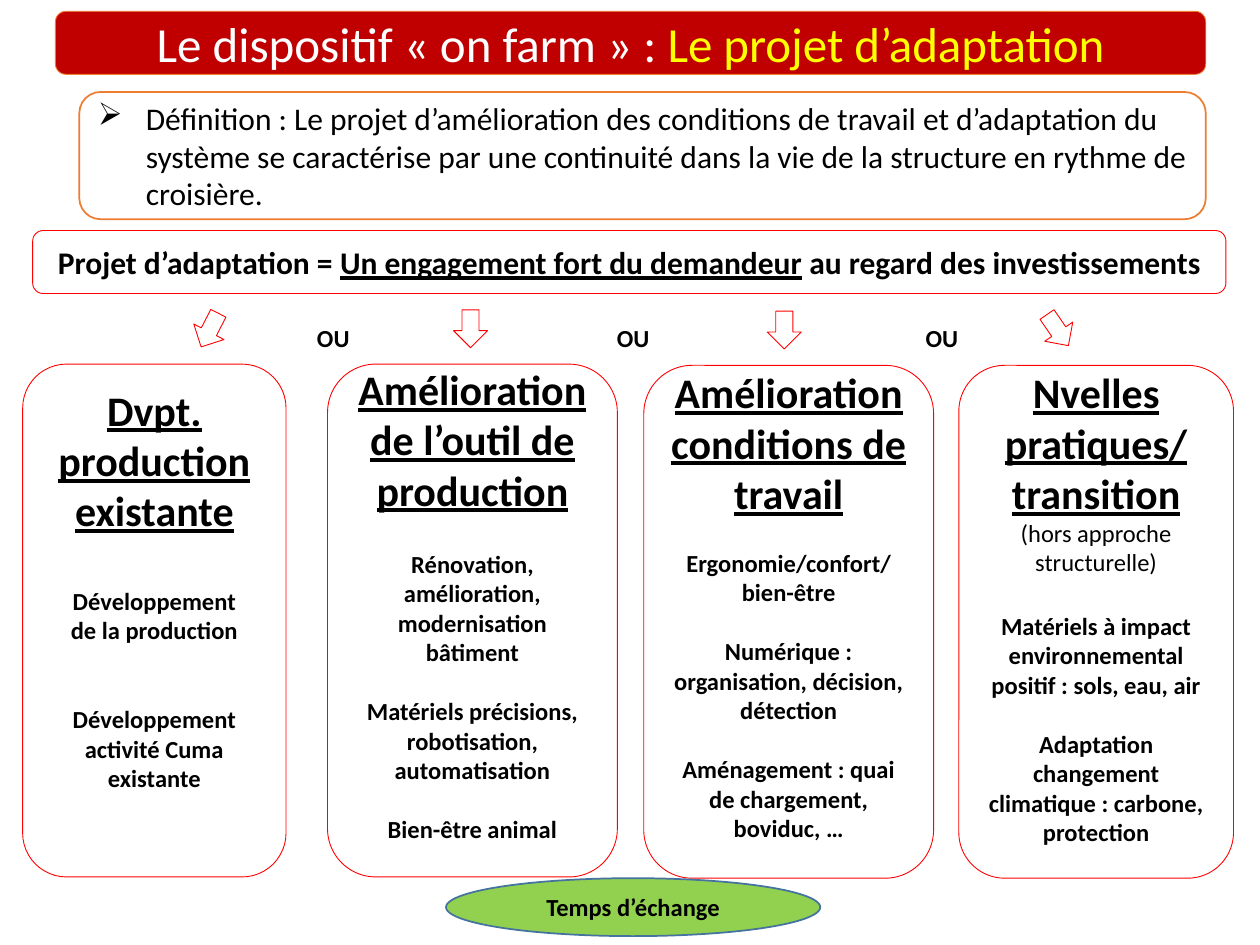
from pptx import Presentation
from pptx.dml.color import RGBColor
from pptx.enum.shapes import MSO_SHAPE
from pptx.enum.text import MSO_ANCHOR, PP_ALIGN
from pptx.oxml.ns import qn
from pptx.util import Inches, Pt
from lxml.etree import SubElement

THEME = {
    "font": "Calibri",
    "white": "FFFFFF", "black": "000000", "red": "FF0000", "dark": "C00000",
    "gold": "FFFF00", "orange": "ED7D31", "green": "92D050", "blue": "43739E",
    "title": 28, "head": 24, "body": 18, "small": 14,
}

TITLE = [("Le dispositif « on farm » : ", "white", ""),
         ("Le projet d’adaptation", "gold", "")]
INTRO = [("Définition : Le projet d’amélioration des conditions de travail et "
          "d’adaptation du système se caractérise par une continuité dans la vie "
          "de la structure en rythme de croisière.", "black", "")]
CLAIM = [("Projet d’adaptation = ", "black", "b"),
         ("Un engagement fort du demandeur", "black", "bu"),
         (" au regard des investissements", "black", "b")]
TALK = [("Temps d’échange", "black", "b")]
OR = [("OU", "black", "b")]

CARDS = [
    {"left": 0.18, "top": 2.89, "width": 2.09, "foot": 0.56,
     "head": "Dvpt. production existante",
     "items": [("Développement", 29, "b"), ("de la production", 0, "b"),
               ("Développement activité Cuma existante", 34, "b")]},
    {"left": 2.6, "top": 2.89, "width": 2.3, "foot": 0.32,
     "head": "Amélioration de l’outil de production",
     "items": [("Rénovation, amélioration, modernisation bâtiment", 19.5, "b"),
               ("Matériels précisions, robotisation, automatisation", 17, "b"),
               ("Bien-être animal", 17, "b")]},
    {"left": 5.11, "top": 2.9, "width": 2.3, "foot": 0.32,
     "head": "Amélioration conditions de travail",
     "items": [("Ergonomie/confort/ bien-être", 17, "b"),
               ("Numérique : organisation, décision, détection", 17, "b"),
               ("Aménagement : quai de chargement, boviduc, …", 17, "b")]},
    {"left": 7.61, "top": 2.9, "width": 2.18, "foot": 0.29,
     "head": "Nvelles pratiques/ transition",
     "items": [("(hors approche structurelle)", 0, ""),
               ("Matériels à impact environnemental positif : sols, eau, air", 19.5, "b"),
               ("Adaptation changement climatique : carbone, protection", 17, "b")]},
]
ARROWS = [(1.53, 2.47, 27.2), (3.6, 2.46, 0), (6.09, 2.47, 0), (8.26, 2.47, 325.6)]
ORS = [2.29, 4.67, 7.12]


def tint(name):
    return RGBColor.from_string(THEME[name])


def draw(slide, kind, box, fill=None, line=None, width=0.5):
    shape = slide.shapes.add_shape(kind, *[Inches(n) for n in box])
    shape.shadow.inherit = False
    if fill:
        shape.fill.solid()
        shape.fill.fore_color.rgb = tint(fill)
    else:
        shape.fill.background()
    if line:
        shape.line.color.rgb = tint(line)
        shape.line.width = Pt(width)
    else:
        shape.line.fill.background()
    frame = shape.text_frame
    frame.word_wrap = True
    frame.vertical_anchor = MSO_ANCHOR.MIDDLE
    return shape


def write(para, runs, size, align=PP_ALIGN.CENTER):
    para.alignment = align
    for text, color, style in runs:
        run = para.add_run()
        run.text = text
        font = run.font
        font.name = THEME["font"]
        font.size = Pt(THEME[size])
        font.color.rgb = tint(color)
        font.bold = "b" in style
        font.underline = "u" in style


def bullet(para, mark, indent):
    props = para._p.get_or_add_pPr()
    props.set("marL", str(Inches(indent)))
    props.set("indent", str(-Inches(indent)))
    SubElement(props, qn("a:buChar")).set("char", mark)


def card(slide, data):
    box = (data["left"], data["top"], data["width"], 4.07)
    frame = draw(slide, MSO_SHAPE.ROUNDED_RECTANGLE, box, "white", "red").text_frame
    frame.margin_bottom = Inches(data["foot"])
    write(frame.paragraphs[0], [(data["head"], "black", "bu")], "head")
    for text, gap, style in data["items"]:
        para = frame.add_paragraph()
        para.space_before = Pt(gap)
        write(para, [(text, "black", style)], "small")


def main():
    deck = Presentation()
    deck.slide_width, deck.slide_height = Inches(10), Inches(7.5)
    slide = deck.slides.add_slide(deck.slide_layouts[6])
    round_box = MSO_SHAPE.ROUNDED_RECTANGLE

    title = draw(slide, round_box, (0.44, 0.09, 9.13, 0.5), "dark", "orange")
    write(title.text_frame.paragraphs[0], TITLE, "title")

    intro = draw(slide, round_box, (0.63, 0.73, 8.94, 1.01), None, "orange", 1)
    para = intro.text_frame.paragraphs[0]
    bullet(para, "➢", 0.38)
    write(para, INTRO, "body", PP_ALIGN.LEFT)

    for left, top, turn in ARROWS:
        arrow = draw(slide, MSO_SHAPE.DOWN_ARROW, (left, top, 0.27, 0.3), "white", "red")
        arrow.rotation = turn

    for data in CARDS:
        card(slide, data)

    for left in ORS:
        label = draw(slide, round_box, (left, 2.53, 0.71, 0.3))
        write(label.text_frame.paragraphs[0], OR, "small")

    claim = draw(slide, round_box, (0.26, 1.83, 9.47, 0.5), "white", "red")
    write(claim.text_frame.paragraphs[0], CLAIM, "body")

    talk = draw(slide, MSO_SHAPE.OVAL, (3.54, 6.97, 2.97, 0.46), "green", "blue", 1)
    write(talk.text_frame.paragraphs[0], TALK, "small")

    deck.save("out.pptx")


if __name__ == "__main__":
    main()
